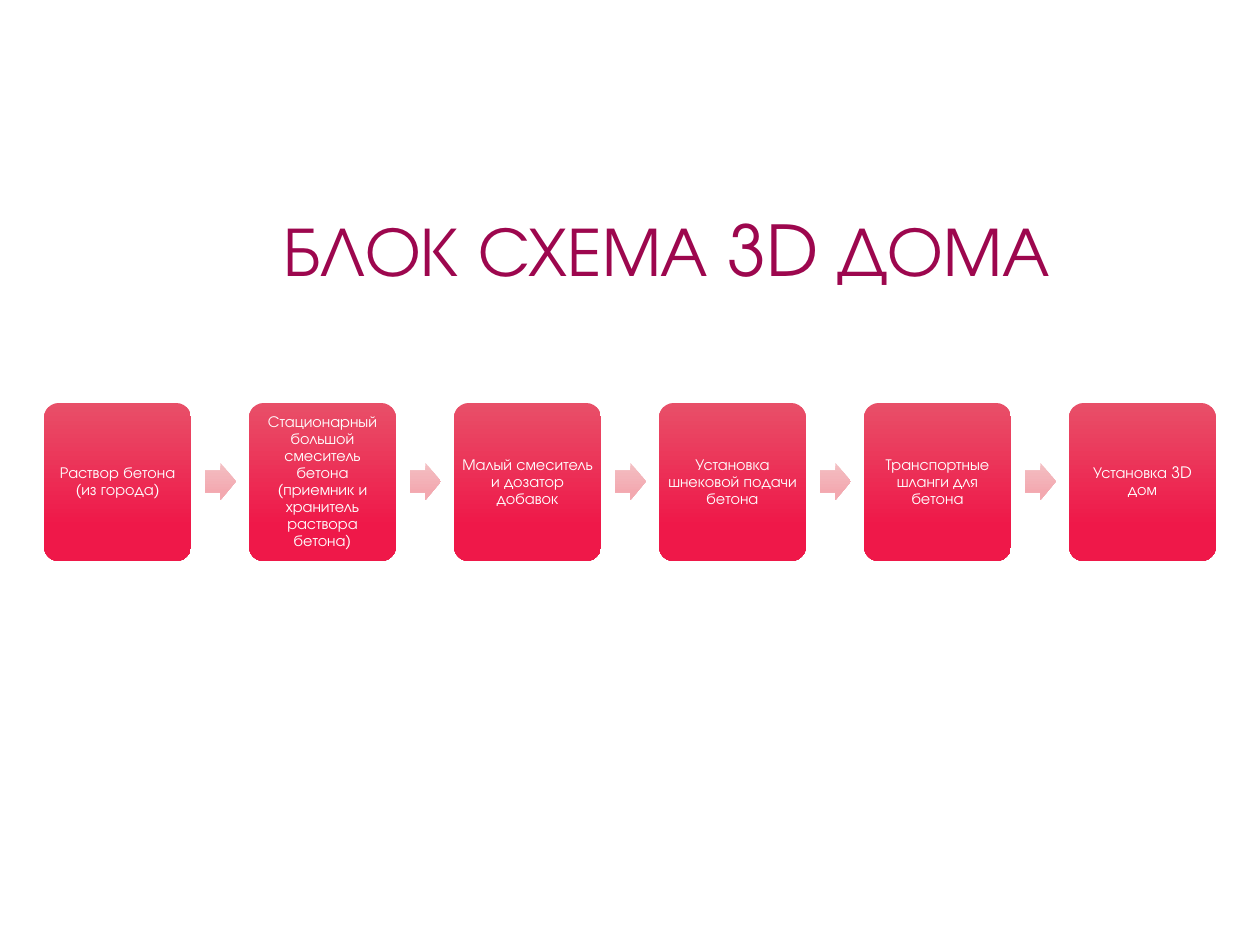
import pptx
import pptx.util
import pptx.dml.color
import pptx.enum.shapes
import pptx.enum.text

PX = 914400 // 126
KIND = pptx.enum.shapes.MSO_SHAPE
ALIGN = pptx.enum.text.PP_ALIGN


class Theme:
    font = "TeX Gyre Adventor"
    head = "9D074E"
    text = "FFFFFF"
    card = ("E84F68", "EF1849")
    arrow = ("F3BFC3", "F3A9B0")
    big = 40
    small = 9


STEPS = [
    "Раствор бетона (из города)",
    "Стационарный большой смеситель бетона (приемник и хранитель раствора бетона)",
    "Малый смеситель и дозатор добавок",
    "Установка шнековой подачи бетона",
    "Транспортные шланги для бетона",
    "Установка 3D дом",
]


def rgb(code):
    return pptx.dml.color.RGBColor.from_string(code)


def scale(*box):
    return [n * PX for n in box]


def write(frame, text, size, color, align):
    frame.word_wrap = True
    frame.vertical_anchor = pptx.enum.text.MSO_ANCHOR.MIDDLE
    para = frame.paragraphs[0]
    para.text = text
    para.alignment = align
    para.line_spacing = 0.9
    para.font.name = Theme.font
    para.font.size = pptx.util.Pt(size)
    para.font.color.rgb = rgb(color)


def block(slide, kind, box, colors, adjust):
    shape = slide.shapes.add_shape(kind, *scale(*box))
    shape.shadow.inherit = False
    shape.line.fill.background()
    for i, value in enumerate(adjust):
        shape.adjustments[i] = value
    # Top-down gradient that ends at 78 %
    shape.fill.gradient()
    shape.fill.gradient_angle = 270
    for stop, color, place in zip(shape.fill.gradient_stops, colors, (0, 0.78)):
        stop.color.rgb = rgb(color)
        stop.position = place
    return shape


def title(slide, box):
    frame = slide.shapes.add_textbox(*scale(*box)).text_frame
    write(frame, "БЛОК СХЕМА 3D ДОМА", Theme.big, Theme.head, ALIGN.RIGHT)


def card(slide, box, text):
    shape = block(slide, KIND.ROUNDED_RECTANGLE, box, Theme.card, [0.1])
    frame = shape.text_frame
    frame.margin_left = frame.margin_right = 4 * PX
    frame.margin_top = frame.margin_bottom = 4 * PX
    write(frame, text, Theme.small, Theme.text, ALIGN.CENTER)


def flow(slide, box, steps):
    left, top, width, height = box
    wide, long, tall = 147, 31, 37
    pitch = (width - wide) // (len(steps) - 1)
    for i, text in enumerate(steps):
        x = left + i * pitch
        # Arrow from the card before
        if i:
            spot = (x - 44, top + (height - tall) // 2, long, tall)
            block(slide, KIND.RIGHT_ARROW, spot, Theme.arrow, [0.6, 0.5])
        card(slide, (x, top, wide, height), text)


def main():
    deck = pptx.Presentation()
    deck.slide_width, deck.slide_height = scale(1260, 945)
    slide = deck.slides.add_slide(deck.slide_layouts[6])
    title(slide, (184, 165, 878, 178))
    flow(slide, (44, 403, 1172, 158), STEPS)
    deck.save("out.pptx")


if __name__ == "__main__":
    main()
